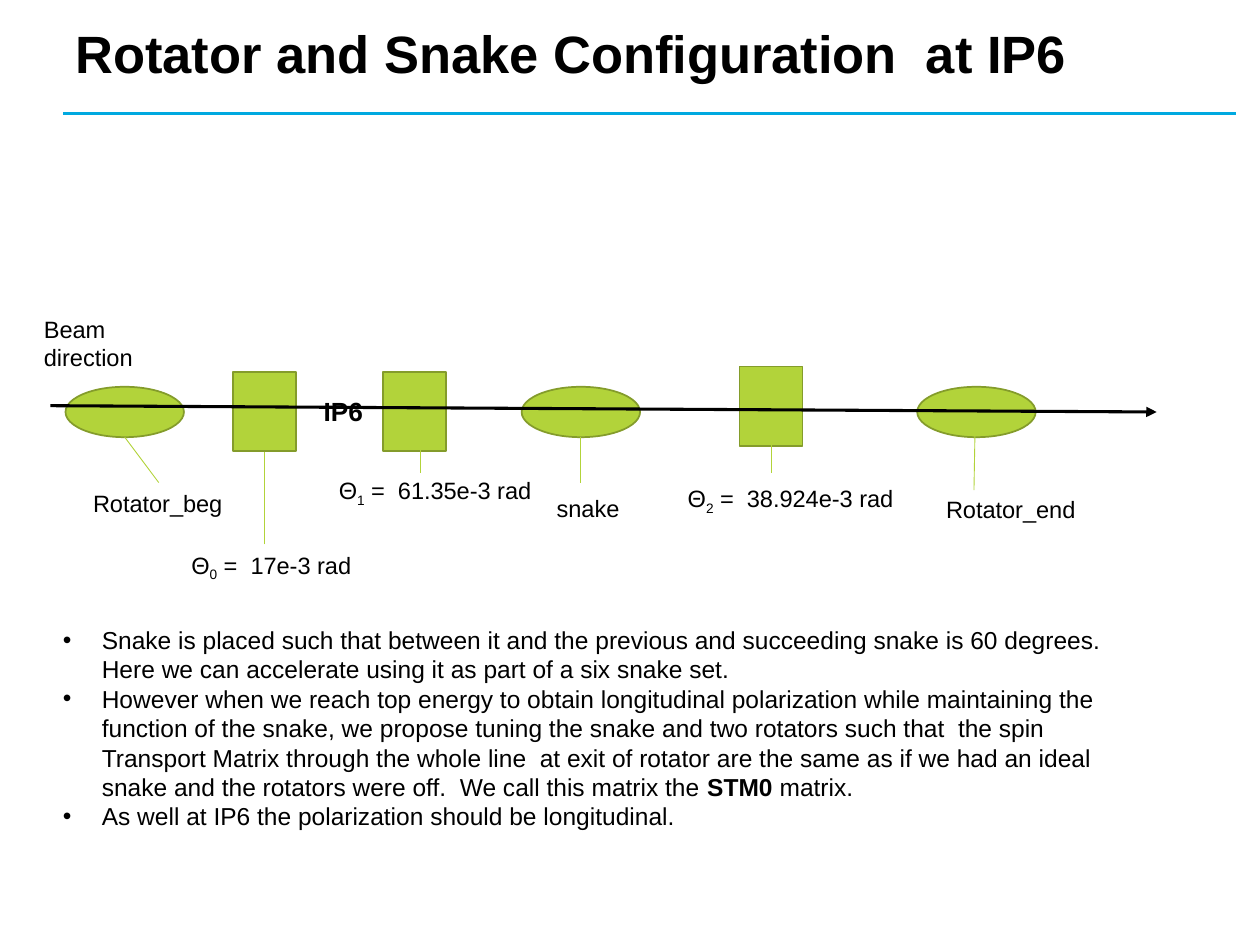
from lxml import etree
from pptx import Presentation
from pptx.dml.color import RGBColor
from pptx.enum.shapes import MSO_CONNECTOR, MSO_SHAPE
from pptx.enum.text import MSO_ANCHOR
from pptx.oxml.ns import qn
from pptx.util import Inches, Pt

COLORS = {
    "text": "000000",
    "beam": "000000",
    "rule": "00A9E0",
    "magnet": "B2D33A",
    "magnet_edge": "849C2B",
}
FONT = "Arial"
LABEL_SIZE = 13.5

BENDS = [(3.04, 2.95), (1.85, 2.95), (5.87, 2.91)]
SPIN_DEVICES = [4.14, 7.28, 0.52]
LABELS = [
    ("Beam direction", 0.25, 2.45, 1.4, 0.56),
    ("Rotator_end", 7.41, 3.88, 1.35, 0.33),
    ("snake", 4.32, 3.87, 0.76, 0.33),
    ("Rotator_beg", 0.64, 3.83, 1.24, 0.33),
]
ANGLES = [
    ("1", "61.35e-3", 2.59, 3.73),
    ("2", "38.924e-3", 5.36, 3.79),
    ("0", "17e-3", 1.42, 4.32),
]
LEADERS = [
    ((2.1, 4.32), (2.1, 3.59)),
    ((3.34, 3.75), (3.34, 3.47)),
    ((6.12, 3.75), (6.12, 3.47)),
    ((1.26, 3.83), (0.99, 3.47)),
    ((4.61, 3.83), (4.61, 3.47)),
    ((7.73, 3.89), (7.74, 3.33)),
]
NOTES = [
    ["Snake is placed such that between it and the previous and succeeding "
     "snake is 60 degrees. Here we can accelerate using it as part of a six "
     "snake set."],
    ["However when we reach top energy to obtain longitudinal polarization "
     "while maintaining the function of the snake, we propose tuning the "
     "snake and two rotators such that  the spin Transport Matrix through "
     "the whole line  at exit of rotator are the same as if we had an ideal "
     "snake and the rotators were off.  We call this matrix the ",
     "STM0", " matrix."],
    ["As well at IP6 the polarization should be longitudinal."],
]


def color(name):
    return RGBColor.from_string(COLORS[name])


def format_run(run, size, bold=False):
    run.font.name = FONT
    run.font.size = Pt(size)
    run.font.bold = bold
    run.font.color.rgb = color("text")


def add_frame(slide, left, top, width, height, wrap=True):
    box = slide.shapes.add_textbox(
        Inches(left), Inches(top), Inches(width), Inches(height))
    box.text_frame.word_wrap = wrap
    return box.text_frame


def add_label(slide, text, *place, size=LABEL_SIZE, bold=False, wrap=True):
    frame = add_frame(slide, *place, wrap=wrap)
    frame.text = text
    format_run(frame.paragraphs[0].runs[0], size, bold)
    return frame


def add_angle(slide, index, value, left, top):
    """Write a bend angle as theta with a subscript index."""
    paragraph = add_frame(slide, left, top, 1.92, 0.33).paragraphs[0]
    for text in ("Θ", index, f" =  {value} rad"):
        run = paragraph.add_run()
        run.text = text
        format_run(run, LABEL_SIZE)
        if text == index:
            run.font._element.set("baseline", "-25000")


def add_magnet(slide, kind, left, top, width, height):
    magnet = slide.shapes.add_shape(
        kind, Inches(left), Inches(top), Inches(width), Inches(height))
    magnet.shadow.inherit = False
    magnet.fill.solid()
    magnet.fill.fore_color.rgb = color("magnet")
    magnet.line.color.rgb = color("magnet_edge")
    magnet.line.width = Pt(1)


def add_line(slide, start, end, color_name, width, arrow=False):
    points = [Inches(value) for value in (*start, *end)]
    line = slide.shapes.add_connector(MSO_CONNECTOR.STRAIGHT, *points)
    line.line.color.rgb = color(color_name)
    line.line.width = Pt(width)
    if arrow:
        etree.SubElement(line.line._get_or_add_ln(), qn("a:tailEnd"),
                         type="triangle")
    etree.SubElement(line._element.spPr, qn("a:effectLst"))


def add_notes(slide):
    frame = add_frame(slide, 0.4, 4.91, 8.66, 1.75)
    for number, parts in enumerate(NOTES):
        paragraph = frame.add_paragraph() if number else frame.paragraphs[0]
        properties = paragraph._p.get_or_add_pPr()
        properties.set("marL", str(Inches(0.31)))
        properties.set("indent", str(-Inches(0.31)))
        etree.SubElement(properties, qn("a:buFont"), typeface=FONT)
        etree.SubElement(properties, qn("a:buChar"), char="•")
        for text in parts:
            run = paragraph.add_run()
            run.text = text
            format_run(run, 14, bold=text == "STM0")


def main():
    presentation = Presentation()
    presentation.slide_width = Inches(10)
    presentation.slide_height = Inches(7.5)
    slide = presentation.slides.add_slide(presentation.slide_layouts[6])

    add_line(slide, (0.5, 0.9), (9.81, 0.9), "rule", 2)
    title = add_label(slide, "Rotator and Snake Configuration  at IP6",
                      0.5, 0, 9.31, 0.9, size=30, bold=True)
    title.vertical_anchor = MSO_ANCHOR.MIDDLE
    title.paragraphs[0].line_spacing = 0.9

    for left, top in BENDS:
        add_magnet(slide, MSO_SHAPE.RECTANGLE, left, top, 0.5, 0.63)
    for left in SPIN_DEVICES:
        add_magnet(slide, MSO_SHAPE.OVAL, left, 3.07, 0.94, 0.4)
    for text, *place in LABELS:
        add_label(slide, text, *place)
    for angle in ANGLES:
        add_angle(slide, *angle)
    for start, end in LEADERS:
        add_line(slide, start, end, "magnet", 0.5)

    add_label(slide, "IP6", 2.47, 3.09, 0.52, 0.35,
              size=15, bold=True, wrap=False)
    add_notes(slide)
    add_line(slide, (0.4, 3.22), (9.18, 3.27), "beam", 1.75, arrow=True)
    presentation.save("out.pptx")


if __name__ == "__main__":
    main()
